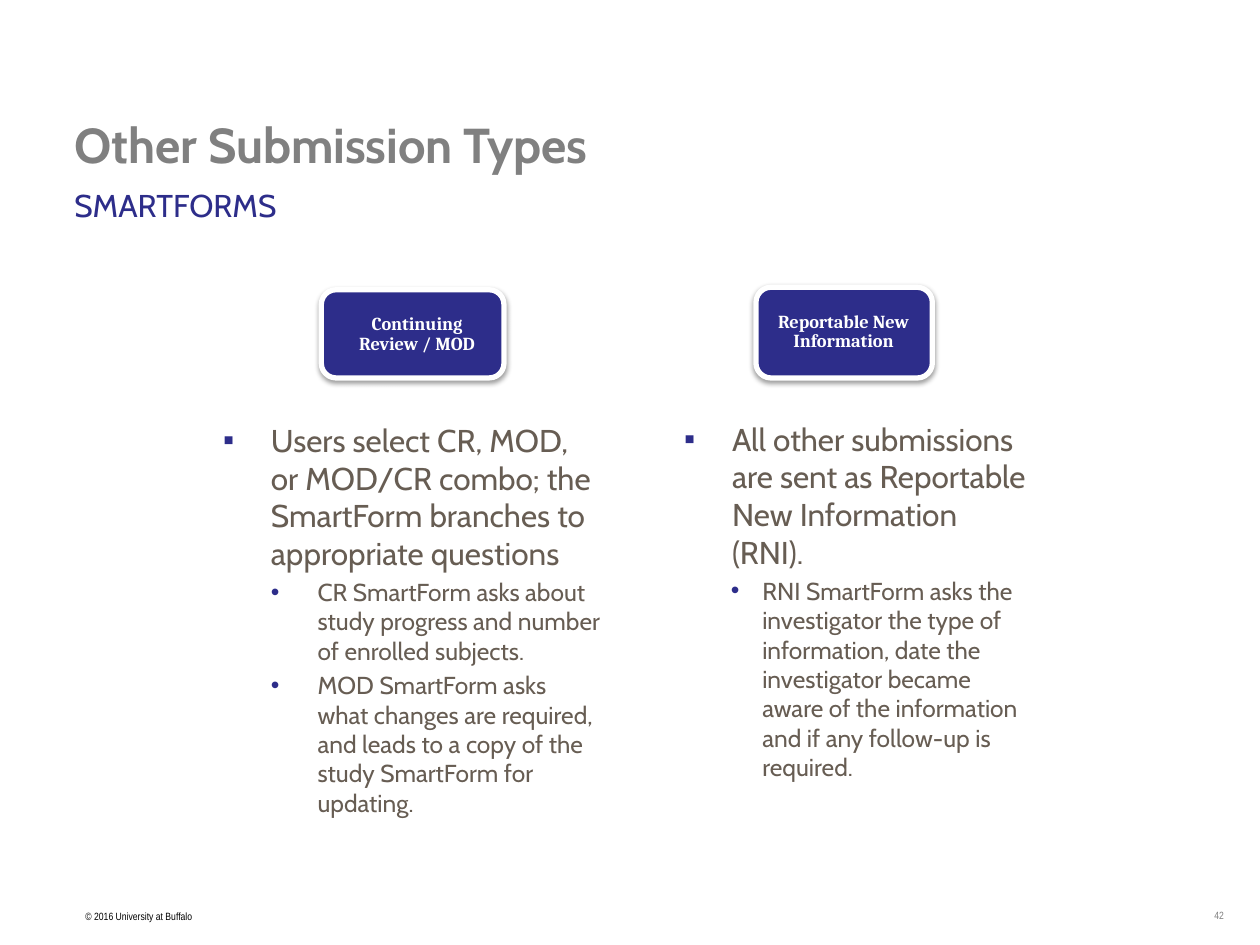
from typing import NamedTuple

from lxml import etree
from pptx import Presentation, util as u
from pptx.dml.color import RGBColor
from pptx.enum import shapes, text
from pptx.oxml.ns import qn

NAVY = RGBColor(0x2D, 0x2D, 0x8A)
GRAY = RGBColor(0x80, 0x80, 0x80)
BROWN = RGBColor(0x67, 0x5D, 0x53)
WHITE = RGBColor(0xFF, 0xFF, 0xFF)
BLACK = RGBColor(0, 0, 0)
BODY, SMALL, LABEL = "Cabin", "Arial Narrow", "Cambria"
COMPARISON_LAYOUT = 4


class Box(NamedTuple):
    """Left, top, width and height in inches."""
    left: float
    top: float
    width: float
    height: float


class Level(NamedTuple):
    bullet: str
    size: float
    left: float
    hanging: float


class Topic(NamedTuple):
    label: str
    badge: Box
    label_box: Box
    list_box: Box
    placeholder: int
    main: str
    details: tuple[str, ...]
    detail_level: Level


MAIN = Level("▪", 18, 0.38, 0.38)
TOPICS = (
    Topic("Continuing Review / MOD", Box(2.55, 2.3, 1.45, 0.7),
          Box(2.62, 2.34, 1.38, 0.63), Box(1.67, 3.29, 3.2, 3.98), 2,
          "Users select CR, MOD, or MOD/CR combo; the SmartForm branches to "
          "appropriate questions",
          ("CR SmartForm asks about study progress and number of enrolled subjects.",
           "MOD SmartForm asks what changes are required, and leads to a copy of "
           "the study SmartForm for updating."),
          Level("•", 14, 0.75, 0.37)),
    Topic("Reportable New Information", Box(6, 2.28, 1.4, 0.72),
          Box(6.03, 2.31, 1.33, 0.65), Box(5.33, 3.28, 2.95, 3.98), 4,
          "All other submissions are sent as Reportable New Information (RNI).",
          ("RNI SmartForm asks the investigator the type of information, date the "
           "investigator became aware of the information and if any follow-up is "
           "required.",),
          Level("•", 14, 0.62, 0.25)),
)


def emu(box: Box) -> list[int]:
    return [u.Inches(length) for length in box]


def place(shape, box: Box) -> None:
    shape.left, shape.top, shape.width, shape.height = emu(box)


def prepare(frame, **settings) -> None:
    defaults = {"word_wrap": True, "auto_size": text.MSO_AUTO_SIZE.NONE,
                "vertical_anchor": text.MSO_ANCHOR.TOP}
    for name, value in (defaults | settings).items():
        setattr(frame, name, value)


def write(paragraph, words: str, face: str, size: float, color: RGBColor,
          bold: bool = False, **settings) -> None:
    run = paragraph.add_run()
    run.text = words
    for name, value in {"name": face, "size": u.Pt(size), "bold": bold}.items():
        setattr(run.font, name, value)
    run.font.color.rgb = color
    for name, value in settings.items():
        setattr(paragraph, name, value)


def add_bullet(paragraph, level: Level) -> None:
    props = paragraph._p.get_or_add_pPr()
    props.set("marL", str(u.Inches(level.left)))
    props.set("indent", str(-u.Inches(level.hanging)))
    color = etree.SubElement(props, qn("a:buClr"))
    etree.SubElement(color, qn("a:srgbClr"), val=str(NAVY))
    etree.SubElement(props, qn("a:buFont"), typeface="Arial")
    etree.SubElement(props, qn("a:buChar"), char=level.bullet)


def add_soft_shadow(shape) -> None:
    shape.shadow.inherit = False
    effects = shape._element.spPr.find(qn("a:effectLst"))
    shadow = etree.SubElement(effects, qn("a:outerShdw"), blurRad=str(u.Pt(3.1)),
                              dist=str(u.Pt(1.6)), dir="5400000", rotWithShape="0")
    color = etree.SubElement(shadow, qn("a:srgbClr"), val=str(BLACK))
    etree.SubElement(color, qn("a:alpha"), val="38000")


def draw_badge(slide, topic: Topic) -> None:
    group = slide.shapes.add_group_shape()
    badge = group.shapes.add_shape(shapes.MSO_SHAPE.ROUNDED_RECTANGLE,
                                   *emu(topic.badge))
    badge.fill.solid()
    badge.fill.fore_color.rgb = NAVY
    badge.line.color.rgb = WHITE
    badge.line.width = u.Pt(3)
    add_soft_shadow(badge)

    frame = group.shapes.add_textbox(*emu(topic.label_box)).text_frame
    margins = {f"margin_{side}": u.Inches(0.04)
               for side in ("left", "top", "right", "bottom")}
    prepare(frame, vertical_anchor=text.MSO_ANCHOR.MIDDLE, **margins)
    write(frame.paragraphs[0], topic.label, LABEL, 10.5, WHITE, bold=True,
          alignment=text.PP_ALIGN.CENTER, line_spacing=0.9)


def fill_list(slide, topic: Topic) -> None:
    holder = slide.placeholders[topic.placeholder]
    place(holder, topic.list_box)
    frame = holder.text_frame
    prepare(frame)
    first = frame.paragraphs[0]
    add_bullet(first, MAIN)
    write(first, topic.main, BODY, MAIN.size, BROWN, space_before=u.Pt(0))
    level = topic.detail_level
    for detail in topic.details:
        paragraph = frame.add_paragraph()
        add_bullet(paragraph, level)
        write(paragraph, detail, BODY, level.size, BROWN, level=1,
              space_before=u.Pt(0.2 * level.size))


def fill_heading(holder, box: Box, words: str, size: float, color: RGBColor,
                 bold: bool) -> None:
    place(holder, box)
    prepare(holder.text_frame)
    write(holder.text_frame.paragraphs[0], words, BODY, size, color, bold,
          alignment=text.PP_ALIGN.LEFT, space_before=u.Pt(0))


def add_footer(slide, box: Box, words: str, color: RGBColor, **settings) -> None:
    frame = slide.shapes.add_textbox(*emu(box)).text_frame
    prepare(frame, **settings)
    write(frame.paragraphs[0], words, SMALL, 6, color)


def main() -> None:
    deck = Presentation()
    deck.slide_width, deck.slide_height = u.Inches(10), u.Inches(7.5)
    slide = deck.slides.add_slide(deck.slide_layouts[COMPARISON_LAYOUT])
    unused = slide.placeholders[3]._element
    unused.getparent().remove(unused)

    add_footer(slide, Box(0.58, 7.17, 1.06, 0.2), "© 2016 University at Buffalo",
               BLACK, word_wrap=False)
    fill_heading(slide.shapes.title, Box(0.49, 0.86, 7.05, 0.56),
                 "Other Submission Types", 28, GRAY, True)
    fill_heading(slide.placeholders[1], Box(0.49, 1.43, 7.05, 0.5),
                 "SMARTFORMS", 18, NAVY, False)
    add_footer(slide, Box(9.54, 7.11, 0.32, 0.31), "42", GRAY,
               vertical_anchor=text.MSO_ANCHOR.MIDDLE)
    for topic in TOPICS:
        draw_badge(slide, topic)
        fill_list(slide, topic)
    deck.save("out.pptx")


if __name__ == "__main__":
    main()
